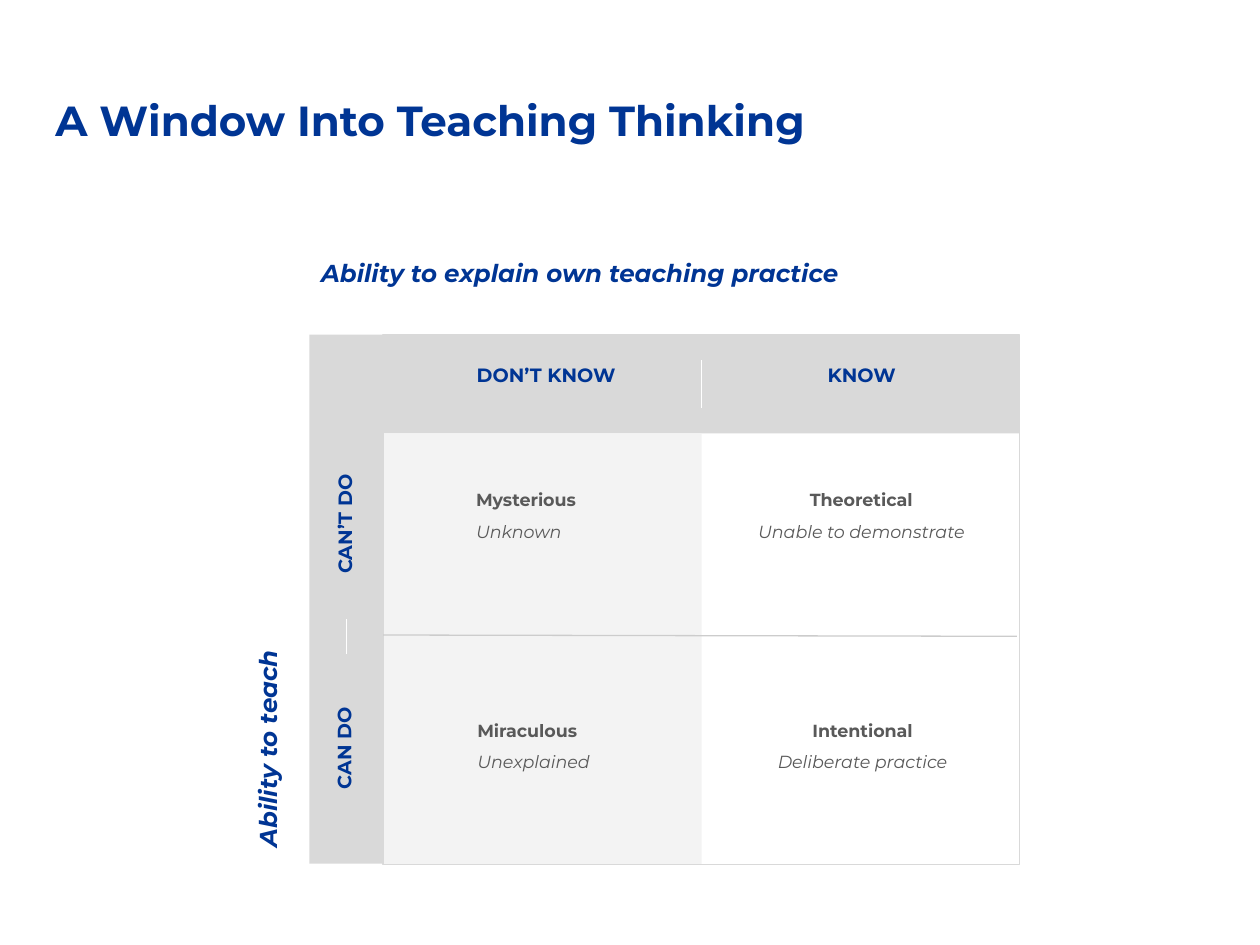
from copy import deepcopy
from typing import NamedTuple

from lxml.etree import SubElement
from pptx import Presentation
from pptx.dml.color import RGBColor
from pptx.enum.shapes import MSO_CONNECTOR, MSO_SHAPE
from pptx.enum.text import MSO_ANCHOR, PP_ALIGN
from pptx.oxml.ns import qn
from pptx.util import Inches, Pt

FONT = "Montserrat"
BLUE, TEXT_GRAY = "003594", "595959"
HEADER_GRAY, CELL_GRAY, RULE_GRAY, WHITE = "D9D9D9", "F3F3F3", "CCCCCC", "FFFFFF"

# Matrix geometry in inches
LEFT, TOP, WIDTH, HEIGHT = 3.04, 2.66, 5.05, 4.2
HEADER_HEIGHT = 0.78
COLUMN_WIDTH = 2.53


class Box(NamedTuple):
    left: float
    top: float
    width: float
    height: float


class Label(NamedTuple):
    text: str
    box: Box
    size: float = 11
    italic: bool = False
    centered: bool = True
    rotation: float = 0


class Quadrant(NamedTuple):
    heading: str
    detail: str
    box: Box
    centered: bool


def rgb(color: str) -> RGBColor:
    return RGBColor.from_string(color)


def add_run(paragraph, text: str, *, size: float, color: str,
            bold: bool = False, italic: bool = False):
    run = paragraph.add_run()
    run.text = text
    font = run.font
    font.name, font.size, font.bold, font.italic = FONT, Pt(size), bold, italic
    font.color.rgb = rgb(color)
    return run


def set_frame(frame, centered: bool):
    """Set margins and wrapping, and return the aligned first paragraph."""
    frame.word_wrap = True
    frame.vertical_anchor = MSO_ANCHOR.TOP
    frame.margin_left = frame.margin_right = Inches(0.1)
    frame.margin_top = frame.margin_bottom = Inches(0.1)
    paragraph = frame.paragraphs[0]
    paragraph.alignment = PP_ALIGN.CENTER if centered else PP_ALIGN.LEFT
    return paragraph


def add_rect(slide, box: Box, *, fill: str = "", line: str = "",
             rotation: float = 0) -> None:
    rect = slide.shapes.add_shape(MSO_SHAPE.RECTANGLE, *map(Inches, box))
    rect.shadow.inherit = False
    rect.rotation = rotation
    if fill:
        rect.fill.solid()
        rect.fill.fore_color.rgb = rgb(fill)
    else:
        rect.fill.background()
    if line:
        rect.line.color.rgb = rgb(line)
        rect.line.width = Pt(0.75)
    else:
        rect.line.fill.background()


def add_line(slide, x1: float, y1: float, x2: float, y2: float, color: str) -> None:
    line = slide.shapes.add_connector(
        MSO_CONNECTOR.STRAIGHT, *map(Inches, (x1, y1, x2, y2)))
    line.line.color.rgb = rgb(color)
    line.line.width = Pt(0.75)
    SubElement(line._element.spPr, qn("a:effectLst"))


def add_label(slide, label: Label) -> None:
    textbox = slide.shapes.add_textbox(*map(Inches, label.box))
    textbox.rotation = label.rotation
    paragraph = set_frame(textbox.text_frame, label.centered)
    add_run(paragraph, label.text, size=label.size, color=BLUE,
            bold=True, italic=label.italic)


def add_quadrant(slide, quadrant: Quadrant) -> None:
    textbox = slide.shapes.add_textbox(*map(Inches, quadrant.box))
    paragraph = set_frame(textbox.text_frame, quadrant.centered)
    paragraph.line_spacing = 1.5
    if not quadrant.centered:
        properties = paragraph._p.get_or_add_pPr()
        properties.set("marL", str(Inches(0.5)))
        properties.set("indent", "0")
    heading = add_run(paragraph, quadrant.heading, size=10, color=TEXT_GRAY, bold=True)
    paragraph.add_line_break()
    # The break needs the heading's size, or it stretches the line
    paragraph._p.find(qn("a:br")).append(deepcopy(heading._r.rPr))
    add_run(paragraph, quadrant.detail, size=10, color=TEXT_GRAY, italic=True)


LABELS = [
    Label("DON’T KNOW", Box(3.07, 2.79, 2.53, 0.53)),
    Label("KNOW", Box(6.02, 2.79, 1.64, 0.53)),
    Label("CAN DO", Box(1.86, 5.74, 1.77, 0.4), rotation=270),
    Label("CAN’T DO", Box(1.94, 3.96, 1.62, 0.4), rotation=270),
    Label("Ability to explain own teaching practice", Box(2.45, 1.95, 5.2, 0.99),
          size=14, italic=True, centered=False),
    Label("Ability to teach", Box(0.19, 4.36, 4.18, 0.75),
          size=14, italic=True, centered=False, rotation=270),
]

QUADRANTS = [
    Quadrant("Mysterious", "Unknown", Box(3.18, 3.7, 2.21, 0.99), False),
    Quadrant("Theoretical", "Unable to demonstrate", Box(5.73, 3.7, 2.21, 1.18), True),
    Quadrant("Miraculous", "Unexplained", Box(3.19, 5.53, 2.21, 0.99), False),
    Quadrant("Intentional", "Deliberate practice", Box(5.74, 5.53, 2.21, 1.18), True),
]


def main() -> None:
    deck = Presentation()
    deck.slide_width, deck.slide_height = Inches(10), Inches(7.5)
    slide = deck.slides.add_slide(deck.slide_layouts[5])

    # Title
    title = slide.shapes.title
    title.left, title.top, title.width, title.height = map(
        Inches, Box(0.34, 0.65, 9.32, 0.83))
    add_run(set_frame(title.text_frame, centered=False),
            "A Window Into Teaching Thinking", size=24, color=BLUE, bold=True)

    # Matrix background: column header, shaded column, frame, row header
    add_rect(slide, Box(LEFT, TOP, WIDTH, HEADER_HEIGHT), fill=HEADER_GRAY)
    add_rect(slide, Box(LEFT, TOP + HEADER_HEIGHT, COLUMN_WIDTH,
                        HEIGHT - HEADER_HEIGHT), fill=CELL_GRAY)
    add_rect(slide, Box(LEFT, TOP, WIDTH, HEIGHT), line=HEADER_GRAY)
    add_rect(slide, Box(0.65, 4.46, HEIGHT, 0.59), fill=HEADER_GRAY, rotation=270)

    # Dividers between columns and rows
    column_edge = LEFT + COLUMN_WIDTH
    add_line(slide, column_edge, 2.86, column_edge, 3.24, WHITE)
    add_line(slide, LEFT, 5.04, 8.07, 5.05, RULE_GRAY)
    add_line(slide, 2.75, 5.19, 2.75, 4.91, WHITE)

    # Headings, axis names and quadrant texts
    for label in LABELS:
        add_label(slide, label)
    for quadrant in QUADRANTS:
        add_quadrant(slide, quadrant)

    deck.save("out.pptx")


if __name__ == "__main__":
    main()
